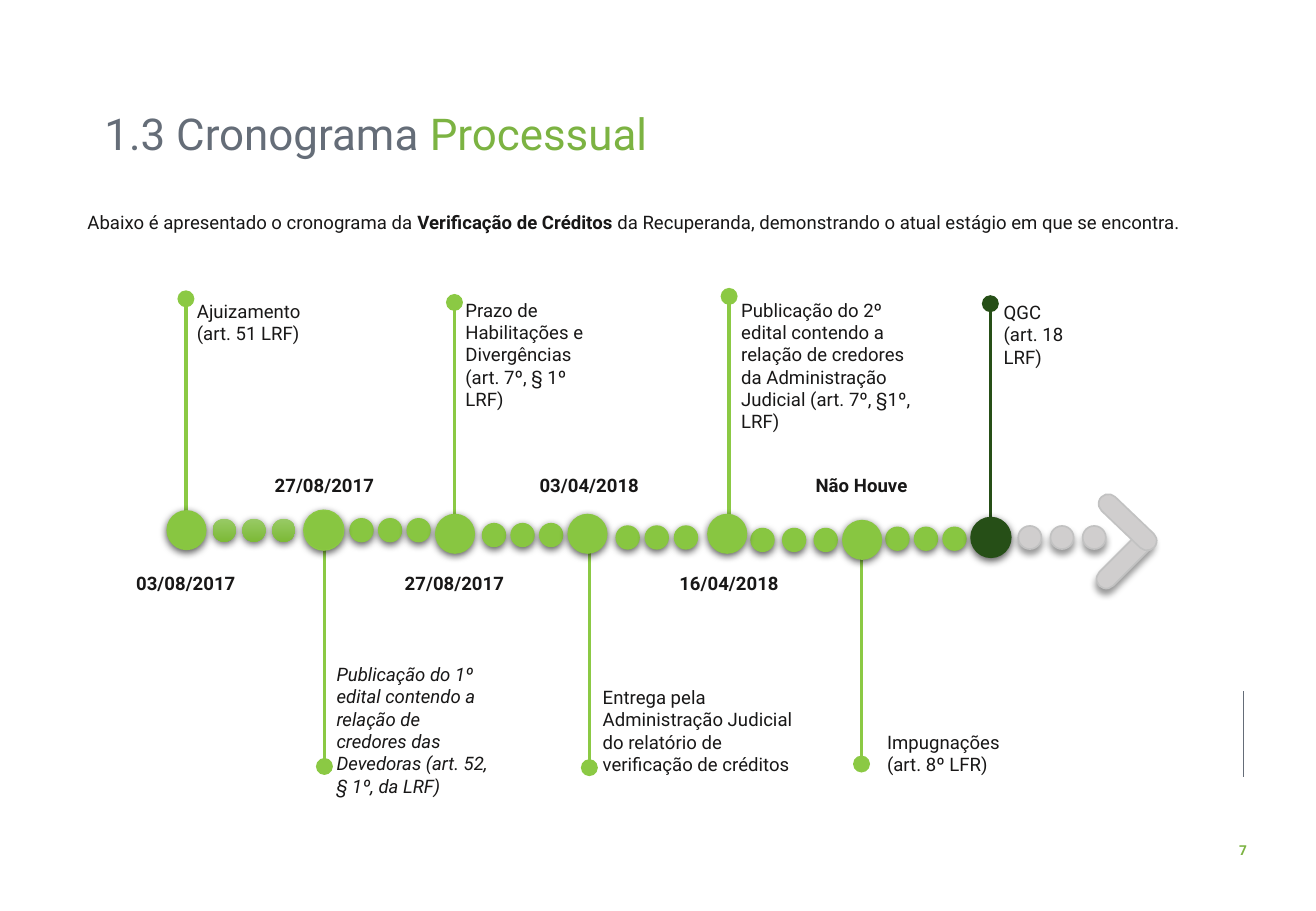
from lxml import etree
from pptx import Presentation
from pptx import util as u
from pptx.dml.color import RGBColor
from pptx.enum import shapes, text
from pptx.oxml.ns import qn

# Content
FONT = "Roboto"
INK, GREY, LEAF = "181717", "656D78", "7CB342"
GREEN, STEM, DARK = "88C641", "8BC944", "264F17"
SILVER, EDGE = "D0CECE", "C2C2C2"
TITLE = [("1.3 Cronograma ", GREY), ("Processual", LEAF)]
INTRO = [
    ("Abaixo é apresentado o cronograma da ", False),
    ("Verificação de Créditos ", True),
    ("da Recuperanda, demonstrando o atual estágio em que se encontra.", False),
]
# date, label, label box, ball (left, top), pin tip (x, y), ball edge
STEPS = [
    ("03/08/2017", "Ajuizamento (art. 51 LRF)",
     (154, 242, 112, 47), (137, 420), (153, 246), None),
    ("27/08/2017", "Publicação do 1º edital contendo a relação de credores "
     "das Devedoras (art. 52, § 1º, da LRF)",
     (269, 541, 143, 103), (250, 420), (267, 631), STEM),
    ("27/08/2017", "Prazo de Habilitações e Divergências (art. 7º, § 1º LRF)",
     (375, 241, 130, 84), (358, 423), (374, 249), None),
    ("03/04/2018", "Entrega pela Administração Judicial do relatório de "
     "verificação de créditos",
     (488, 560, 178, 84), (467, 423), (485, 632), None),
    ("16/04/2018", "Publicação do 2º edital contendo a relação de credores "
     "da Administração Judicial (art. 7º, §1º, LRF)",
     (602, 241, 157, 121), (582, 423), (600, 244), None),
    ("Não Houve", "Impugnações (art. 8º LFR)",
     (722, 597, 124, 47), (693, 428), (709, 629), None),
    ("", "QGC\n(art. 18 LRF)",
     (818, 243, 93, 47), (799, 426), (815, 250), DARK),
]
ITALIC = 1
# first left, last left, top of each run of three dots
DOTS = [(175, 224, 427), (288, 335, 427), (397, 444, 431), (507, 555, 433),
        (618, 670, 435), (729, 776, 434), (838, 891, 433)]
# left, top, turn, shadow
HEAD = [(896, 453, 315, True), (898, 422, 43.7, False)]
BALL, DOT, MID = 33, 19, 440
SOFT, DEEP = (40, 4, 3), (63, 4.5, 1.5)  # opacity %, blur pt, distance pt


def px(n):
    return u.Emu(round(n * 9144))


def rgb(code):
    return RGBColor.from_string(code)


deck = Presentation()
deck.slide_width, deck.slide_height = px(1083), px(750)
slide = deck.slides.add_slide(deck.slide_layouts[5])
tree = slide.shapes


def run(par, words, size, color=INK, bold=False, italic=False):
    r = par.add_run()
    r.text = words
    f = r.font
    f.name, f.size, f.bold, f.italic = FONT, u.Pt(size), bold, italic
    f.color.rgb = rgb(color)


def frame(shape):
    tf = shape.text_frame
    tf.word_wrap = True
    tf.auto_size = text.MSO_AUTO_SIZE.NONE
    tf.margin_left = tf.margin_right = px(8)
    tf.margin_top = tf.margin_bottom = px(5)
    return tf


def box(x, y, w, h):
    return frame(tree.add_textbox(px(x), px(y), px(w), px(h)))


def line(x1, y1, x2, y2, color, width, pin=False):
    c = tree.add_connector(shapes.MSO_CONNECTOR.STRAIGHT,
                           px(x1), px(y1), px(x2), px(y2))
    c.line.color.rgb = rgb(color)
    c.line.width = u.Pt(width)
    props = c._element.spPr
    if pin:
        etree.SubElement(props.find(qn("a:ln")), qn("a:headEnd"),
                         type="oval", w="lg", len="lg")
    etree.SubElement(props, qn("a:effectLst"))


def solid(kind, x, y, w, h, fill, edge, width, shade):
    s = tree.add_shape(kind, px(x), px(y), px(w), px(h))
    if isinstance(fill, tuple):
        s.fill.gradient()
        s.fill.gradient_angle = 270
        for stop, code in zip(s.fill.gradient_stops, fill):
            stop.color.rgb = rgb(code)
    else:
        s.fill.solid()
        s.fill.fore_color.rgb = rgb(fill)
    if edge:
        s.line.color.rgb = rgb(edge)
        s.line.width = u.Pt(width)
    else:
        s.line.fill.background()
    s.shadow.inherit = False
    if shade:
        alpha, blur, dist = shade
        glow = s._element.spPr.find(qn("a:effectLst"))
        drop = etree.SubElement(glow, qn("a:outerShdw"), blurRad=str(u.Pt(blur)),
                                dist=str(u.Pt(dist)), dir="5400000",
                                rotWithShape="0")
        tint = etree.SubElement(drop, qn("a:srgbClr"), val="000000")
        etree.SubElement(tint, qn("a:alpha"), val=str(alpha * 1000))
    return s


# Title
head = tree.title
head.left, head.top, head.width, head.height = px(78), px(86), px(818), px(53)
tf = frame(head)
tf.vertical_anchor = text.MSO_ANCHOR.MIDDLE
par = tf.paragraphs[0]
par.alignment = text.PP_ALIGN.LEFT
par.line_spacing = 0.9
for words, color in TITLE:
    run(par, words, 26, color)

# Intro
par = box(31, 166, 1017, 30).paragraphs[0]
par.alignment = text.PP_ALIGN.JUSTIFY
par.line_spacing = 1.14
par._p.get_or_add_pPr().set("indent", str(px(33)))
for words, bold in INTRO:
    run(par, words, 11, bold=bold)

# Pins, behind the balls
for *_, (left, top), (x, y), edge in STEPS:
    line(x, y, x, top + BALL // 2, DARK if edge == DARK else STEM, 2, pin=True)

# Dots between steps
OVAL = shapes.MSO_SHAPE.OVAL
for i, (first, last, top) in enumerate(DOTS):
    fill, edge, width, shade = GREEN, GREEN, 0.75, DEEP
    if i == 0:
        fill, edge = ("98CA65", "7CB936"), None
    elif i == len(DOTS) - 1:
        fill, edge, width, shade = SILVER, EDGE, 1, SOFT
    for k in range(3):
        solid(OVAL, first + (last - first) * k / 2, top, DOT, DOT,
              fill, edge, width, shade)

# Arrow head
for x, y, turn, shade in HEAD:
    bar = solid(shapes.MSO_SHAPE.ROUNDED_RECTANGLE, x, y, 60, 16,
                SILVER, EDGE, 1, SOFT if shade else None)
    bar.adjustments[0] = 0.5
    bar.rotation = turn

# Balls, dates and labels
for i, (date, label, area, (left, top), (x, y), edge) in enumerate(STEPS):
    solid(OVAL, left, top, BALL, BALL, DARK if edge == DARK else GREEN,
          edge, 0.75, DEEP)
    if date:
        par = box(x - 55, 466 if y < MID else 385, 110, 29).paragraphs[0]
        par.alignment = text.PP_ALIGN.CENTER
        run(par, date, 11, bold=True)
    tf = box(*area)
    for k, words in enumerate(label.split("\n")):
        par = tf.add_paragraph() if k else tf.paragraphs[0]
        run(par, words, 11, italic=i == ITALIC)

# Side rule and page number
line(1023, 569, 1023, 640, GREY, 0.5)
par = box(1006, 688, 34, 24).paragraphs[0]
par.alignment = text.PP_ALIGN.CENTER
run(par, "7", 8.1, LEAF, bold=True)

deck.save("out.pptx")
